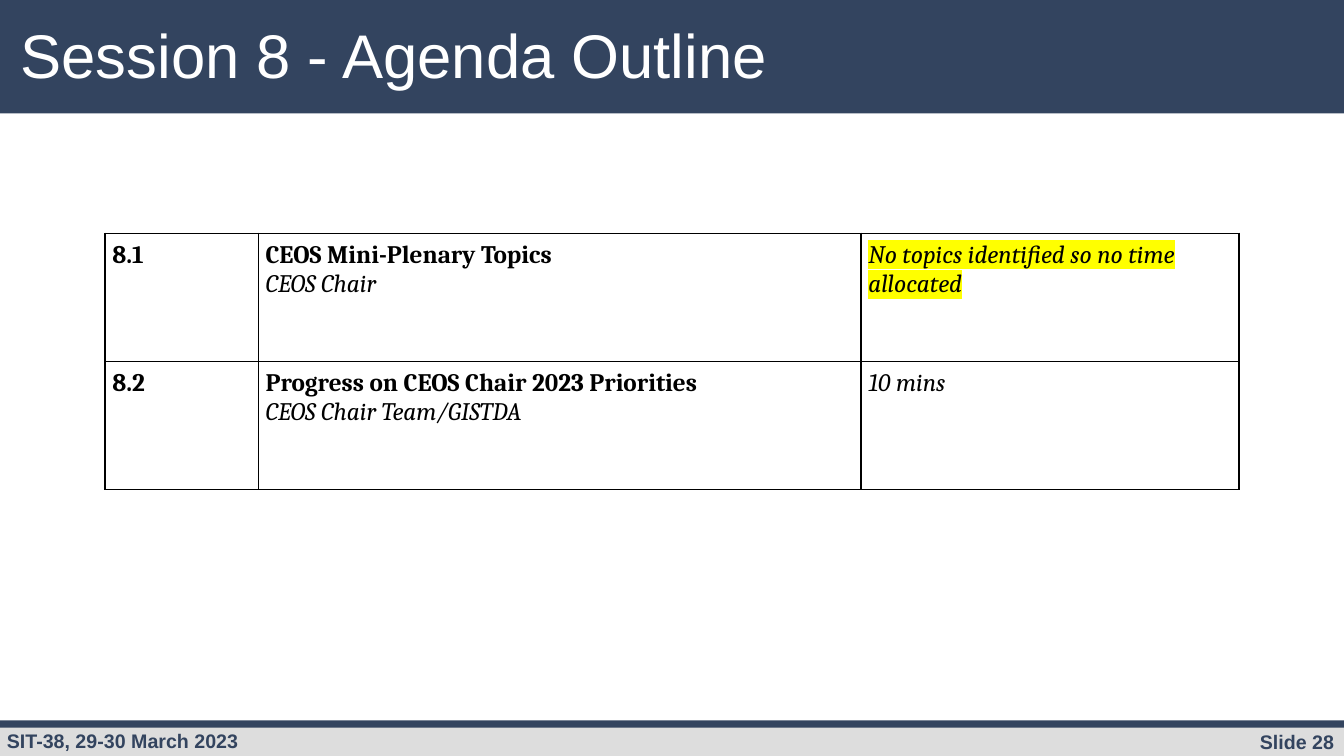
from dataclasses import dataclass

from lxml.etree import SubElement
from pptx import Presentation
from pptx.dml.color import RGBColor
from pptx.enum.shapes import MSO_SHAPE
from pptx.enum.text import MSO_ANCHOR, MSO_AUTO_SIZE, PP_ALIGN
from pptx.oxml import parse_xml
from pptx.oxml.ns import nsdecls, qn
from pptx.util import Pt

PX = 9525  # 96 px to the inch
WIDTH, HEIGHT = 1280, 720


@dataclass(frozen=True)
class Theme:
    navy: str = "33445F"
    grey: str = "DDDDDD"
    white: str = "FFFFFF"
    black: str = "000000"
    yellow: str = "FFFF00"
    sans: str = "Arial"
    serif: str = "Cambria"
    title: int = 44
    table: int = 18
    footer: int = 14


THEME = Theme()

AGENDA = [
    ("8.1", "CEOS Mini-Plenary Topics", "CEOS Chair",
     "No topics identified so no time allocated", THEME.yellow),
    ("8.2", "Progress on CEOS Chair 2023 Priorities", "CEOS Chair Team/GISTDA",
     "10 mins", None),
]


def px(*lengths):
    return [n * PX for n in lengths]


def style(p, font, size, color, bold=False, italic=False, highlight=None):
    for r in p.runs:
        f = r.font
        f.name, f.size, f.bold, f.italic = font, Pt(size), bold, italic
        f.color.rgb = RGBColor.from_string(color)
        if highlight:
            mark = parse_xml(f'<a:highlight {nsdecls("a")}>'
                             f'<a:srgbClr val="{highlight}"/></a:highlight>')
            r.font._element.find(qn("a:solidFill")).addnext(mark)


def add_bar(s, x, y, w, h, color):
    sp = s.shapes.add_shape(MSO_SHAPE.RECTANGLE, *px(x, y, w, h))
    sp.shadow.inherit = False
    sp.fill.solid()
    sp.fill.fore_color.rgb = RGBColor.from_string(color)
    sp.line.fill.background()


def add_header(s, x, y, w, h, text):
    add_bar(s, x, y, w, h, THEME.navy)
    title = s.shapes.title
    s.shapes.element.append(title.element)  # in front of the bar
    title.left, title.top, title.width, title.height = px(x + 10, y + 11, 910, 81)
    tf = title.text_frame
    tf.text = text
    tf.word_wrap = True
    tf.auto_size = MSO_AUTO_SIZE.NONE
    tf.vertical_anchor = MSO_ANCHOR.TOP
    p = tf.paragraphs[0]
    p.alignment = PP_ALIGN.LEFT
    style(p, THEME.sans, THEME.title, THEME.white)


def add_footer(s, x, y, w, h, event, number):
    stripe = 7
    add_bar(s, x, y + 4, w, h - 4, THEME.grey)
    add_bar(s, x, y, w, stripe, THEME.navy)
    labels = [(event, x - 3, y + 3, 517, PP_ALIGN.LEFT),
              (number, x + w - 202, y + 4, 202, PP_ALIGN.RIGHT)]
    for text, left, top, width, align in labels:
        tf = s.shapes.add_textbox(*px(left, top, width, 32)).text_frame
        tf.word_wrap = True
        tf.text = text
        p = tf.paragraphs[0]
        p.alignment = align
        style(p, THEME.sans, THEME.footer, THEME.navy, bold=True)


def format_cell(cell):
    cell.margin_left = cell.margin_right = cell.margin_top = cell.margin_bottom = 7 * PX
    tcPr = cell._tc.get_or_add_tcPr()
    for side in ("lnL", "lnR", "lnT", "lnB"):
        ln = SubElement(tcPr, qn(f"a:{side}"), w=str(Pt(1)))
        fill = SubElement(ln, qn("a:solidFill"))
        SubElement(fill, qn("a:srgbClr"), val=THEME.black)
    cell.fill.solid()
    cell.fill.fore_color.rgb = RGBColor.from_string(THEME.white)


def add_agenda(s, x, y, col_widths, row_height, items):
    box = px(x, y, sum(col_widths), row_height * len(items))
    table = s.shapes.add_table(len(items), len(col_widths), *box).table
    table.first_row = table.horz_banding = False
    for col, width in zip(table.columns, col_widths):
        col.width = width * PX
    for row, (number, topic, lead, time, highlight) in zip(table.rows, items):
        row.height = row_height * PX
        bold, italic = {"bold": True}, {"italic": True}
        contents = [[(number, bold)],
                    [(topic, bold), (lead, italic)],
                    [(time, {"italic": True, "highlight": highlight})]]
        for cell, lines in zip(row.cells, contents):
            format_cell(cell)
            tf = cell.text_frame
            tf.text = "\n".join(text for text, _ in lines)
            for p, (_, look) in zip(tf.paragraphs, lines):
                style(p, THEME.serif, THEME.table, THEME.black, **look)


def main():
    prs = Presentation()
    prs.slide_width, prs.slide_height = px(WIDTH, HEIGHT)
    s = prs.slides.add_slide(prs.slide_layouts[5])
    add_header(s, 0, 0, WIDTH, 108, "Session 8 - Agenda Outline")
    add_footer(s, 0, 686, WIDTH, HEIGHT - 686, "SIT-38, 29-30 March 2023", "Slide 28")
    add_agenda(s, 100, 222, (146, 574, 360), 122, AGENDA)
    prs.save("out.pptx")


if __name__ == "__main__":
    main()
